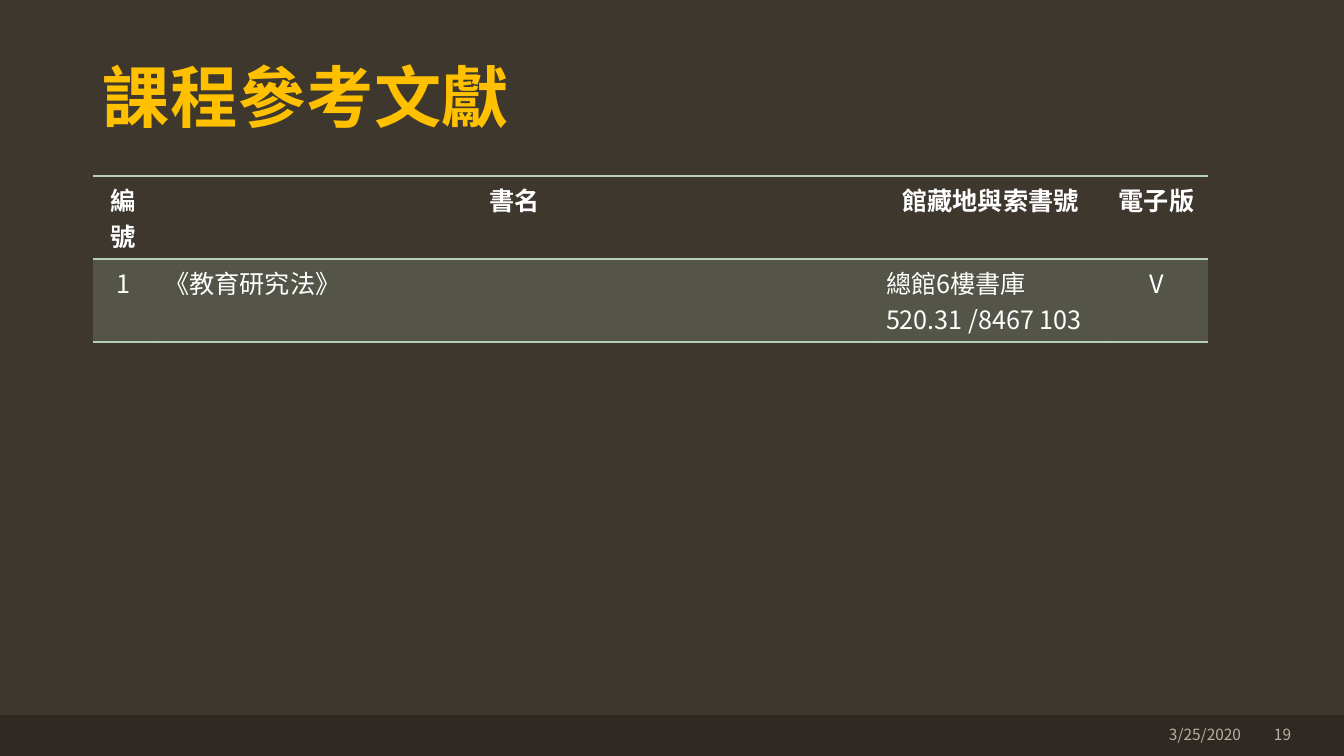
from dataclasses import dataclass

from lxml import etree
from pptx import Presentation
from pptx.dml.color import RGBColor
from pptx.enum.shapes import MSO_SHAPE
from pptx.enum.text import MSO_ANCHOR, PP_ALIGN
from pptx.oxml.ns import qn
from pptx.util import Emu, Pt

RECTANGLE = MSO_SHAPE.RECTANGLE
BOTTOM, MIDDLE = MSO_ANCHOR.BOTTOM, MSO_ANCHOR.MIDDLE
LEFT, CENTER, RIGHT = PP_ALIGN.LEFT, PP_ALIGN.CENTER, PP_ALIGN.RIGHT

TITLE = "課程參考文獻"
HEADERS = ["編號", "書名", "館藏地與索書號", "電子版"]
BOOKS = [["1", "《教育研究法》", "總館6樓書庫\n520.31 /8467 103", "V"]]
BOOK_ALIGNMENTS = [CENTER, LEFT, LEFT, CENTER]
DATE, PAGE_NUMBER = "3/25/2020", "19"

SLIDE_SIZE = (1344, 756)
TITLE_BOX = (93, 16, 1159, 126)
TABLE_LEFT, TABLE_TOP, ROW_HEIGHT = 93, 176, 83
COLUMN_WIDTHS = [61, 722, 229, 103]
FOOTER_TOP = 715
DATE_BOX = (1067, 722, 184, 25)
PAGE_BOX = (1252, 722, 49, 25)
NO_STYLE = "{2D5ABB26-0587-4C30-8999-92F81FD0307C}"


@dataclass(frozen=True)
class Theme:
    background: str = "3D372E"
    footer: str = "2E2923"
    title: str = "FFC000"
    text: str = "FFFFFF"
    muted: str = "BAB1A3"
    accent: str = "B2D0B4"
    font: str = "Noto Sans CJK SC"
    footer_font: str = "Noto Sans CJK TC"
    title_size: int = 48
    table_size: int = 18
    footer_size: int = 11
    border_width: int = 1
    band_opacity: int = 20


THEME = Theme()


def px(length):
    return Emu(round(length * 914400 / 100.8))


def fill_solid(fill, color):
    fill.solid()
    fill.fore_color.rgb = RGBColor.from_string(color)


def add_run(paragraph, text, size, color, font_name, bold=False):
    run = paragraph.add_run()
    run.text = text
    font = run.font
    font.size = Pt(size)
    font.bold = bold
    font.name = font_name
    font.color.rgb = RGBColor.from_string(color)
    properties = run.font._element
    latin = properties.find(qn("a:latin"))
    east_asian = etree.Element(qn("a:ea"), typeface=font_name)
    latin.addnext(east_asian)
    return run


def add_text(slide, box, text, size, color, font_name, anchor, alignment, bold=False):
    frame = slide.shapes.add_textbox(*map(px, box)).text_frame
    frame.word_wrap = True
    frame.vertical_anchor = anchor
    paragraph = frame.paragraphs[0]
    paragraph.alignment = alignment
    return paragraph, add_run(paragraph, text, size, color, font_name, bold)


def set_borders(cell, visible_sides):
    properties = cell._tc.get_or_add_tcPr()
    for position, side in enumerate("LRTB"):
        line = etree.Element(qn(f"a:ln{side}"))
        if side in visible_sides:
            line.set("w", str(Pt(THEME.border_width)))
            solid = etree.SubElement(line, qn("a:solidFill"))
            etree.SubElement(solid, qn("a:srgbClr"), val=THEME.accent)
        else:
            etree.SubElement(line, qn("a:noFill"))
        properties.insert(position, line)


def fill_band(cell):
    fill_solid(cell.fill, THEME.accent)
    color = cell._tc.tcPr.find(f".//{qn('a:srgbClr')}")
    etree.SubElement(color, qn("a:alpha"), val=str(THEME.band_opacity * 1000))


def add_book_table(slide):
    rows = [HEADERS, *BOOKS]
    graphic_frame = slide.shapes.add_table(
        len(rows), len(HEADERS), px(TABLE_LEFT), px(TABLE_TOP),
        px(sum(COLUMN_WIDTHS)), px(ROW_HEIGHT * len(rows)),
    )
    table = graphic_frame.table
    table.horz_banding = False
    graphic_frame.element.find(f".//{qn('a:tableStyleId')}").text = NO_STYLE
    for column, width in zip(table.columns, COLUMN_WIDTHS):
        column.width = px(width)
    for row_index, values in enumerate(rows):
        is_header = row_index == 0
        table.rows[row_index].height = px(ROW_HEIGHT)
        for column_index, value in enumerate(values):
            cell = table.cell(row_index, column_index)
            for line_index, line in enumerate(value.split("\n")):
                frame = cell.text_frame
                paragraph = frame.add_paragraph() if line_index else frame.paragraphs[0]
                paragraph.alignment = CENTER if is_header else BOOK_ALIGNMENTS[column_index]
                add_run(paragraph, line, THEME.table_size, THEME.text, THEME.font, is_header)
            if is_header:
                cell.fill.background()
            else:
                fill_band(cell)
            set_borders(cell, "TB")


def main():
    presentation = Presentation()
    presentation.slide_width, presentation.slide_height = map(px, SLIDE_SIZE)
    slide = presentation.slides.add_slide(presentation.slide_layouts[6])
    fill_solid(slide.background.fill, THEME.background)

    width, height = SLIDE_SIZE
    footer = slide.shapes.add_shape(
        RECTANGLE, px(0), px(FOOTER_TOP), px(width), px(height - FOOTER_TOP)
    )
    footer.shadow.inherit = False
    fill_solid(footer.fill, THEME.footer)
    footer.line.fill.background()

    paragraph, run = add_text(
        slide, TITLE_BOX, TITLE, THEME.title_size, THEME.title, THEME.font, BOTTOM, LEFT, True
    )
    paragraph.line_spacing = 0.9
    run.font._element.set("spc", "50")

    add_book_table(slide)
    for box, text in ((DATE_BOX, DATE), (PAGE_BOX, PAGE_NUMBER)):
        add_text(
            slide, box, text, THEME.footer_size, THEME.muted, THEME.footer_font, MIDDLE, RIGHT
        )
    presentation.save("out.pptx")


if __name__ == "__main__":
    main()
